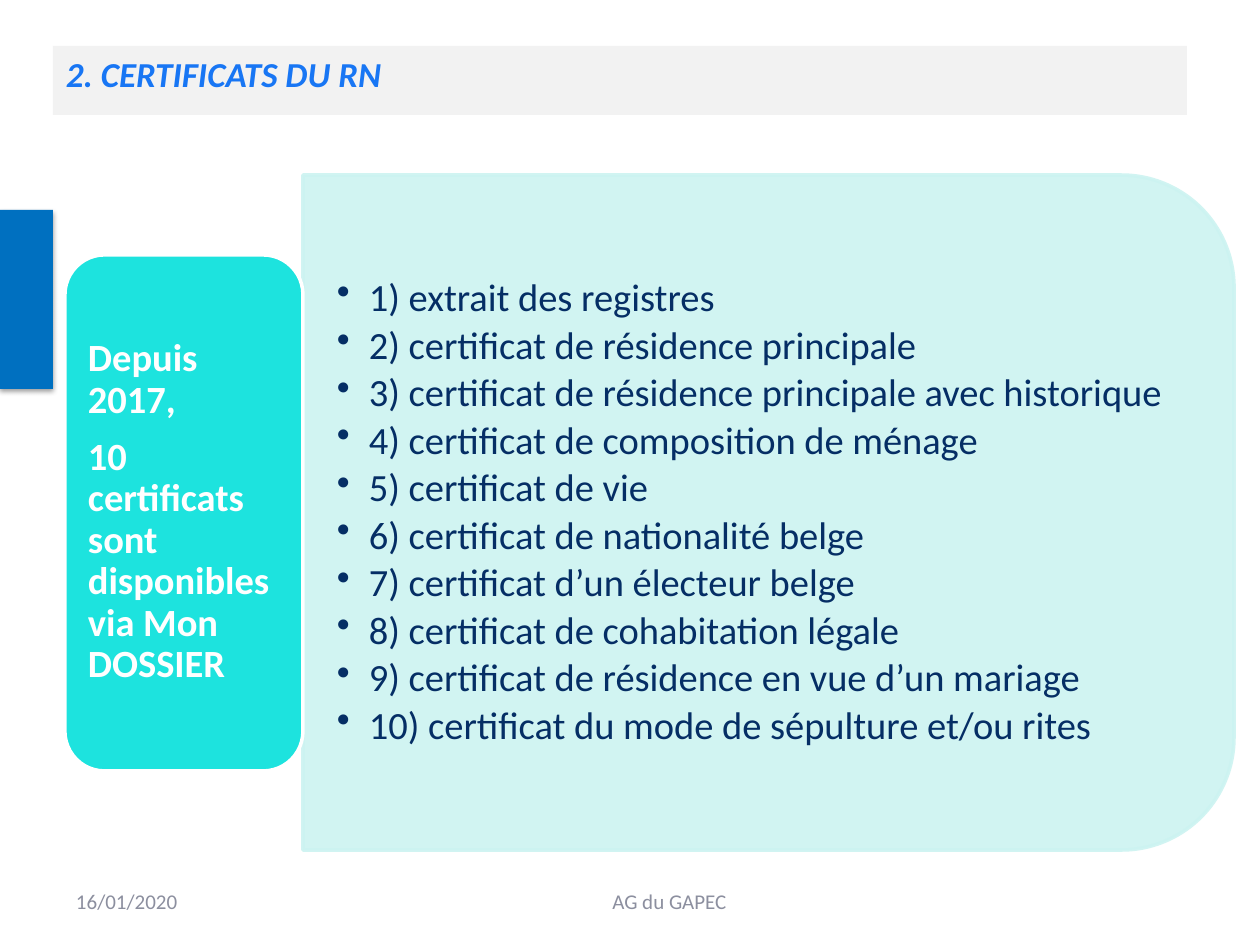
from dataclasses import dataclass

from lxml.etree import SubElement
from pptx import Presentation
from pptx.dml.color import RGBColor as Rgb
from pptx.enum.shapes import MSO_SHAPE as Shape
from pptx.enum.text import MSO_ANCHOR as Anchor, MSO_AUTO_SIZE as AutoSize, PP_ALIGN as Align
from pptx.oxml.ns import qn
from pptx.util import Pt

PX = 914400 / 126


@dataclass(frozen=True)
class Theme:
    """Colours, font and type sizes of the slide."""
    font: str = "Calibri"
    title: str = "1876F4"
    title_fill: str = "F2F2F2"
    accent: str = "0070C0"
    panel: str = "CCF3F1"
    card: str = "05E0DB"
    ink: str = "052E65"
    white: str = "FFFFFF"
    muted: str = "8C8F9F"
    title_size: int = 20
    body_size: int = 22
    footer_size: int = 12


THEME = Theme()

CERTIFICATES = [
    "extrait des registres",
    "certificat de résidence principale",
    "certificat de résidence principale avec historique",
    "certificat de composition de ménage",
    "certificat de vie",
    "certificat de nationalité belge",
    "certificat d’un électeur belge",
    "certificat de cohabitation légale",
    "certificat de résidence en vue d’un mariage",
    "certificat du mode de sépulture et/ou rites",
]
INTRO = ["Depuis 2017,", "10 certificats sont disponibles via Mon DOSSIER"]


def px(n):
    """Turn pixels into EMU."""
    return round(n * PX)


def apply(target, formats):
    """Set each attribute named in formats on target."""
    for name, value in formats.items():
        setattr(target, name, value)


def place(sp, box):
    """Set left, top, width and height in pixels."""
    apply(sp, dict(zip(("left", "top", "width", "height"), map(px, box))))


def paint(fill, color, alpha=None):
    """Give a fill one colour and an optional opacity in percent."""
    fill.solid()
    fill.fore_color.rgb = Rgb.from_string(color)
    if alpha:
        clr = fill._xPr.find(qn("a:solidFill"))[0]
        SubElement(clr, qn("a:alpha"), val=str(alpha * 1000))


def add_block(s, kind, box, color, alpha=None, line=None, line_alpha=None, rotation=0):
    """Add a filled preset shape without text."""
    sp = s.shapes.add_shape(kind, *map(px, box))
    sp.rotation = rotation
    sp.shadow.inherit = False
    paint(sp.fill, color, alpha)
    if line:
        sp.line.width = Pt(2)
        paint(sp.line.fill, line, line_alpha)
    else:
        sp.line.fill.background()
    return sp


def add_shadow(sp, color, alpha, blur, dist):
    """Cast a soft shadow straight down."""
    effects = sp._element.spPr.find(qn("a:effectLst"))
    shadow = SubElement(effects, qn("a:outerShdw"), blurRad=str(Pt(blur)),
                        dist=str(Pt(dist)), dir="5400000", rotWithShape="0")
    clr = SubElement(shadow, qn("a:srgbClr"), val=color)
    SubElement(clr, qn("a:alpha"), val=str(alpha * 1000))


def add_bullet(p, indent):
    """Give a paragraph a round bullet with a hanging indent."""
    pPr = p._p.get_or_add_pPr()
    pPr.set("marL", str(px(indent)))
    pPr.set("indent", str(-px(indent)))
    SubElement(pPr, qn("a:buChar"), char="•")


def write(tf, lines, font, para=None, anchor=Anchor.MIDDLE, insets=(13, 6), indent=0):
    """Fill a text frame with evenly formatted paragraphs."""
    x, y = map(px, insets)
    apply(tf, dict(word_wrap=True, auto_size=AutoSize.NONE, vertical_anchor=anchor,
                   margin_left=x, margin_right=x, margin_top=y, margin_bottom=y))
    color, size, *styles = font
    for i, line in enumerate(lines):
        p = tf.paragraphs[0] if i == 0 else tf.add_paragraph()
        apply(p, para or {})
        if indent:
            add_bullet(p, indent)
        r = p.add_run()
        r.text = line
        apply(r.font, {"name": THEME.font, "size": Pt(size), **dict.fromkeys(styles, True)})
        r.font.color.rgb = Rgb.from_string(color)


def add_text(s, box, lines, font, **options):
    """Add a text box."""
    write(s.shapes.add_textbox(*map(px, box)).text_frame, lines, font, **options)


def add_title(s, text):
    """Place and format the title placeholder."""
    sp = s.shapes.title
    place(sp, (53, 46, 1134, 69))
    paint(sp.fill, THEME.title_fill)
    write(sp.text_frame, [text], (THEME.title, THEME.title_size, "bold", "italic"),
          para={"alignment": Align.LEFT}, anchor=Anchor.TOP)


def add_list_panel(s):
    """Add the rounded panel with the numbered certificates."""
    add_block(s, Shape.ROUND_2_SAME_RECTANGLE, (431, 47, 675, 931), THEME.panel, 90,
              THEME.panel, 90, rotation=90)
    lines = [f"{n}) {name}" for n, name in enumerate(CERTIFICATES, 1)]
    add_text(s, (303, 208, 899, 610), lines, (THEME.ink, THEME.body_size),
             para={"level": 1, "line_spacing": 0.9, "space_after": Pt(3.4)},
             insets=(34, 17), indent=32)


def add_intro_card(s):
    """Add the card that introduces the list."""
    add_block(s, Shape.ROUNDED_RECTANGLE, (65, 255, 238, 516), THEME.card, 90, THEME.white)
    add_text(s, (76, 266, 215, 493), INTRO, (THEME.white, THEME.body_size, "bold"),
             para={"line_spacing": 0.9, "space_after": Pt(8.6)}, insets=(12, 6))


def add_footer(s):
    """Add the date and the name of the meeting."""
    font = (THEME.muted, THEME.footer_size)
    add_text(s, (63, 876, 294, 50), ["16/01/2020"], font)
    add_text(s, (372, 876, 595, 50), ["AG du GAPEC"], font, para={"alignment": Align.CENTER})


def main():
    """Build the slide and save it."""
    prs = Presentation()
    prs.slide_width, prs.slide_height = px(1260), px(945)
    s = prs.slides.add_slide(prs.slide_layouts[5])
    add_title(s, "2. CERTIFICATS DU RN")
    tab = add_block(s, Shape.RECTANGLE, (0, 210, 53, 179), THEME.accent)
    add_shadow(tab, "000000", 38, 3.1, 1.6)
    add_list_panel(s)
    add_intro_card(s)
    add_footer(s)
    prs.save("out.pptx")


if __name__ == "__main__":
    main()
